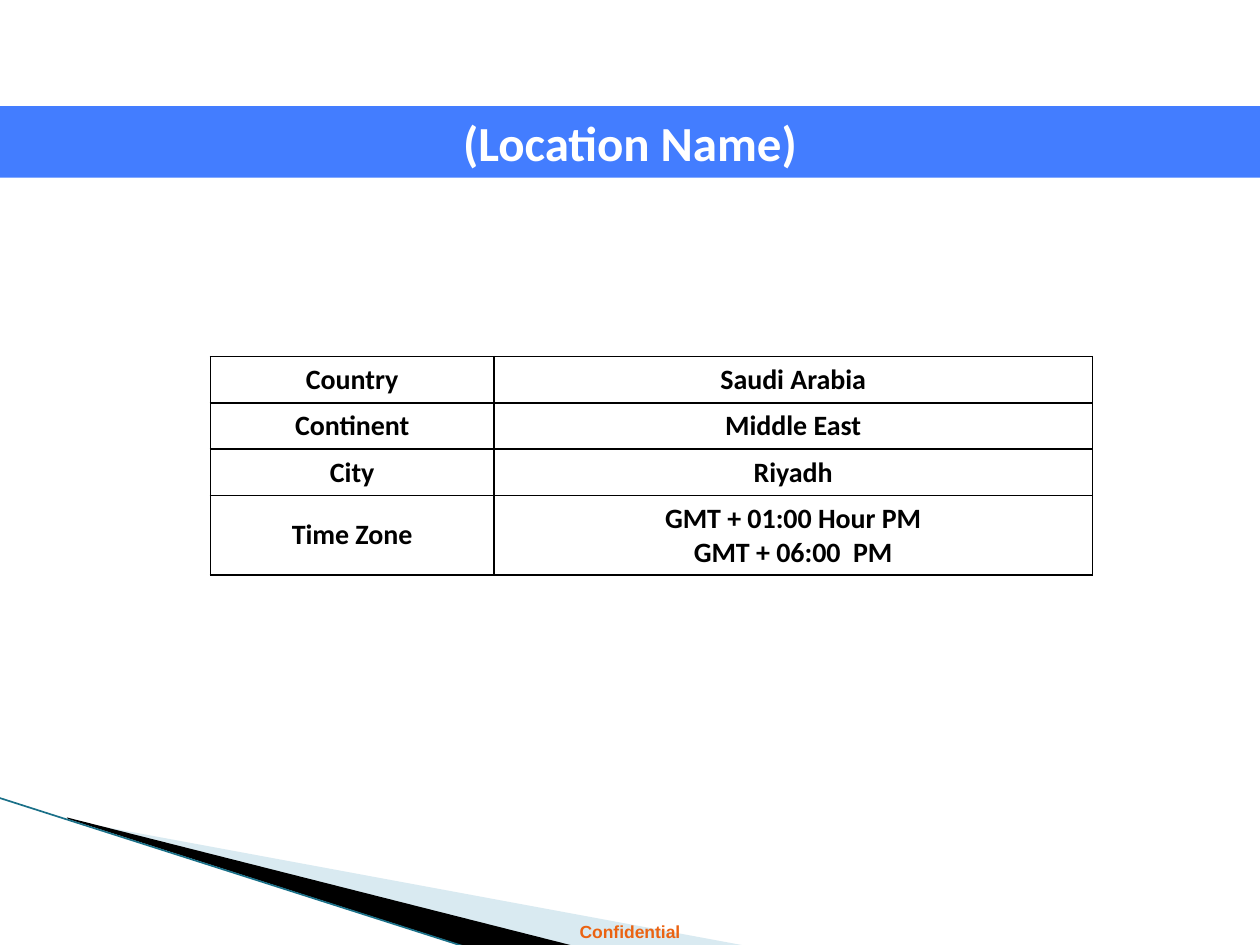
"""Build the location slide with a title bar and a details table."""
from lxml import etree
from pptx import Presentation
from pptx.dml.color import RGBColor
from pptx.enum.shapes import MSO_CONNECTOR
from pptx.enum.text import MSO_ANCHOR, PP_ALIGN
from pptx.oxml.ns import qn
from pptx.util import Cm, Pt

STRAIGHT = MSO_CONNECTOR.STRAIGHT
MIDDLE = MSO_ANCHOR.MIDDLE
CENTER = PP_ALIGN.CENTER

BLACK = "000000"
DETAILS = [
    ("Country", "Saudi Arabia"),
    ("Continent", "Middle East"),
    ("City", "Riyadh"),
    ("Time Zone", "GMT + 01:00 Hour PM\nGMT + 06:00  PM"),
]
COLUMN_WIDTHS = (5.72, 12.06)
ROW_HEIGHTS = (0.93, 0.93, 0.93, 1.61)
PALE_WEDGE = [(1.4, 16.54), (15.11, 19.08), (11.58, 19.08), (1.4, 16.51)]
BLACK_WEDGE = [(1.35, 16.48), (11.61, 19.08), (9.45, 19.1), (1.37, 16.51)]


def color(value):
    """Turn a hex string into a colour."""
    return RGBColor.from_string(value)


def set_text(frame, text, size, font_name, font_color):
    """Fill a text frame with bold centred text."""
    frame.text = text
    for para in frame.paragraphs:
        para.alignment = CENTER
        for span in para.runs:
            span.font.size = Pt(size)
            span.font.name = font_name
            span.font.bold = True
            span.font.color.rgb = color(font_color)


def add_title(slide, text):
    """Turn the title placeholder into a full-width bar."""
    title = slide.shapes.title
    title.left, title.top, title.width, title.height = Cm(0), Cm(2.14), Cm(25.4), Cm(1.44)
    title.fill.solid()
    title.fill.fore_color.rgb = color("437DFF")
    title.text_frame.vertical_anchor = MIDDLE
    set_text(title.text_frame, text, 28, "Calibri", "FFFFFF")


def add_wedge(slide, points, fill_color, opacity=100):
    """Draw a filled wedge through points given in centimetres."""
    start, *others = [(Cm(x), Cm(y)) for x, y in points]
    builder = slide.shapes.build_freeform(*start)
    builder.add_line_segments(others, close=True)
    wedge = builder.convert_to_shape()
    wedge.shadow.inherit = False
    wedge.line.fill.background()
    wedge.fill.solid()
    wedge.fill.fore_color.rgb = color(fill_color)
    if opacity < 100:
        shade = wedge.fill._xPr.find(".//" + qn("a:srgbClr"))
        etree.SubElement(shade, qn("a:alpha"), val=str(opacity * 1000))


def add_edge_line(slide):
    """Draw the thin line along the lower edge of the wedges."""
    edge = slide.shapes.add_connector(STRAIGHT, Cm(-0.03), Cm(16.08), Cm(9.42), Cm(19.1))
    edge.line.color.rgb = color("1A7088")
    edge.line.width = Pt(0.95)
    etree.SubElement(edge._element.spPr, qn("a:effectLst"))


def add_footer(slide, text):
    """Add the centred footer label."""
    box = slide.shapes.add_textbox(Cm(0), Cm(18.44), Cm(25.4), Cm(0.69))
    box.text_frame.word_wrap = True
    set_text(box.text_frame, text, 10, "Arial", "EB6312")


def set_borders(cell):
    """Give a cell thin black borders on all sides."""
    properties = cell._tc.get_or_add_tcPr()
    for position, side in enumerate(("a:lnL", "a:lnR", "a:lnT", "a:lnB")):
        border = etree.Element(qn(side), w=str(Pt(1)))
        fill = etree.SubElement(border, qn("a:solidFill"))
        etree.SubElement(fill, qn("a:srgbClr"), val=BLACK)
        properties.insert(position, border)


def add_details_table(slide):
    """Add the bordered table of location details."""
    frame = slide.shapes.add_table(
        len(DETAILS), len(COLUMN_WIDTHS), Cm(4.24), Cm(7.19),
        Cm(sum(COLUMN_WIDTHS)), Cm(sum(ROW_HEIGHTS)))
    table = frame.table
    table.first_row = False
    table.horz_banding = False
    for column, width in zip(table.columns, COLUMN_WIDTHS):
        column.width = Cm(width)
    for row, height, texts in zip(table.rows, ROW_HEIGHTS, DETAILS):
        row.height = Cm(height)
        for cell, text in zip(row.cells, texts):
            cell.fill.background()
            cell.vertical_anchor = MIDDLE
            set_text(cell.text_frame, text, 16, "Calibri", BLACK)
            set_borders(cell)


def main():
    """Build and save the deck."""
    deck = Presentation()
    deck.slide_width, deck.slide_height = Cm(25.4), Cm(19.05)
    slide = deck.slides.add_slide(deck.slide_layouts[5])
    add_wedge(slide, PALE_WEDGE, "A0CBDC", opacity=40)
    add_wedge(slide, BLACK_WEDGE, BLACK)
    add_edge_line(slide)
    add_footer(slide, "Confidential")
    add_title(slide, "(Location Name)")
    add_details_table(slide)
    deck.save("out.pptx")


if __name__ == "__main__":
    main()
